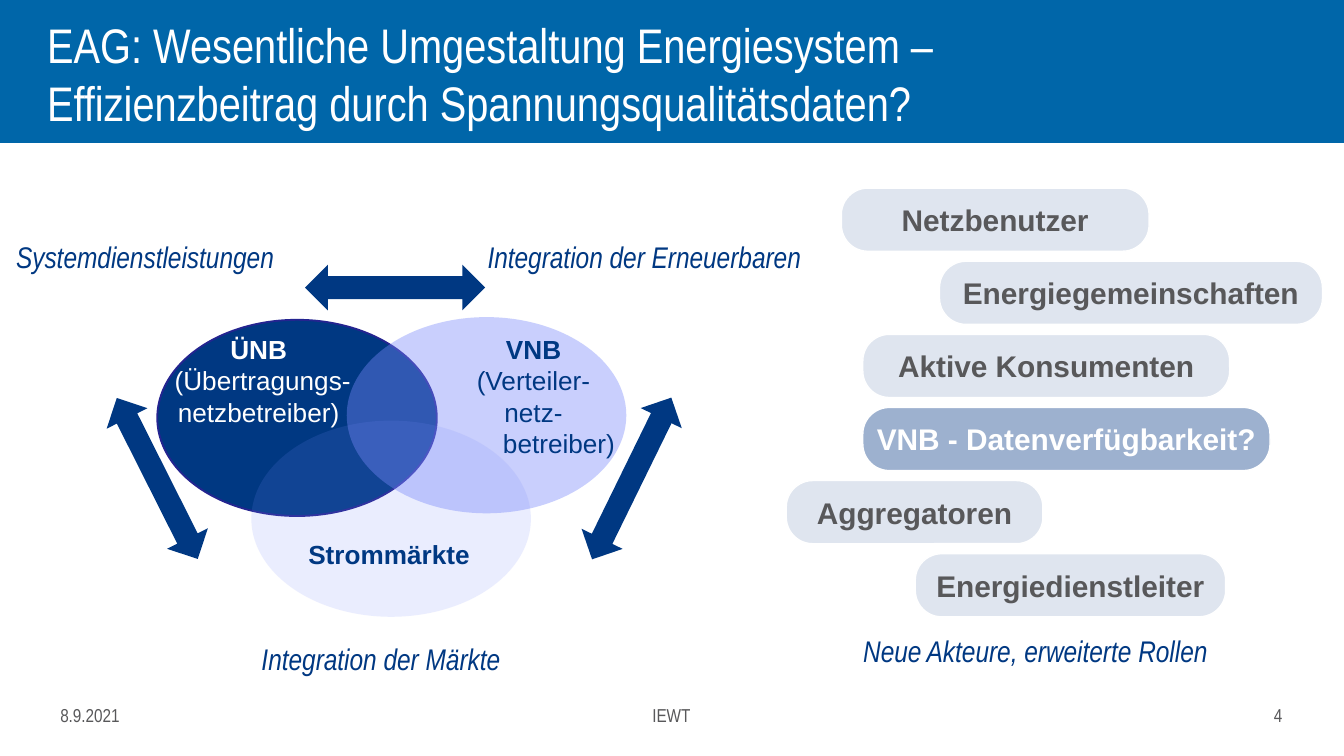
from pptx import Presentation
from pptx.dml.color import RGBColor
from pptx.enum.shapes import MSO_SHAPE as Shape
from pptx.enum.text import MSO_ANCHOR as Anchor, PP_ALIGN as Align
from pptx.oxml.ns import qn
from pptx.util import Inches, Pt
from lxml import etree

NAVY, BLUE, LILAC, GREY, WHITE = "003882", "0066A9", "7889FB", "58585A", "FFFFFF"


def add_filled(shapes, kind, box, fill, line=None, line_width=1):
    filled = shapes.add_shape(kind, *map(Inches, box))
    filled.shadow.inherit = False
    filled.fill.solid()
    filled.fill.fore_color.rgb = RGBColor.from_string(fill)
    if line:
        filled.line.color.rgb = RGBColor.from_string(line)
        filled.line.width = Pt(line_width)
    else:
        filled.line.fill.background()
    return filled


def write(frame, lines, size, color, name="Arial", align=Align.CENTER):
    frame.text = "\n".join(lines)
    for paragraph in frame.paragraphs:
        paragraph.alignment = align
        paragraph.font.size = Pt(size)
        paragraph.font.name = name
        paragraph.font.color.rgb = RGBColor.from_string(color)


prs = Presentation()
prs.slide_width = Inches(10)
prs.slide_height = prs.slide_width * 9 // 16
slide = prs.slides.add_slide(prs.slide_layouts[5])

header = add_filled(slide.shapes, Shape.RECTANGLE, (0, 0, 10, 1.06), BLUE, BLUE)
slide.shapes._spTree.insert(2, header._element)

title = slide.shapes.title
title.left, title.top, title.width, title.height = map(Inches, (0.35, 0.37, 7.32, 0.39))
heading = title.text_frame
heading.margin_left = heading.margin_right = heading.margin_top = 0
heading.margin_bottom = Inches(0.04)
heading.vertical_anchor = Anchor.MIDDLE
write(heading, ["EAG: Wesentliche Umgestaltung Energiesystem –\v"
                "Effizienzbeitrag durch Spannungsqualitätsdaten?"],
      26, WHITE, "Arial Narrow", Align.LEFT)

venn = slide.shapes.add_group_shape().shapes
for left, top, fill, line, alpha in [
    (1.17, 2.38, NAVY, "242490", 100),
    (2.58, 2.36, LILAC, None, 40),
    (1.87, 3.13, LILAC, None, 15),
]:
    circle = add_filled(venn, Shape.OVAL, (left, top, 2.08, 1.46), fill, line)
    if alpha < 100:
        tint = circle._element.spPr.find(qn("a:solidFill"))[0]
        etree.SubElement(tint, qn("a:alpha")).set("val", str(alpha * 1000))

for box, color, lines, indented, indent in [
    ((1.14, 2.43, 1.57, 0.81), WHITE, ["ÜNB", "(Übertragungs-", "netzbetreiber)"], 1, 0.06),
    ((2.19, 3.96, 1.41, 0.34), NAVY, ["Strommärkte"], 0, 0),
    ((3.26, 2.43, 1.42, 1.04), NAVY, ["VNB", "(Verteiler-", "netz-", "betreiber)"], 3, 0.38),
]:
    sector = venn.add_textbox(*map(Inches, box)).text_frame
    sector.word_wrap = True
    sector.margin_left = sector.margin_right = 0
    write(sector, lines, 14, color)
    sector.paragraphs[0].font.bold = True
    sector.paragraphs[indented]._p.get_or_add_pPr().set("marL", str(Inches(indent)))

for left, top, angle in [(4.03, 3.39, 296.1), (2.27, 1.97, 0), (0.5, 3.39, 243.3)]:
    arrow = add_filled(slide.shapes, Shape.LEFT_RIGHT_ARROW, (left, top, 1.34, 0.34), NAVY)
    arrow.rotation = angle

for left, top, width, caption in [
    (1.68, 4.72, 2.31, "Integration der Märkte"),
    (3.51, 1.73, 2.57, "Integration der Erneuerbaren"),
    (-0.3, 1.73, 2.76, "Systemdienstleistungen"),
    (6.27, 4.66, 2.87, "Neue Akteure, erweiterte Rollen"),
]:
    goal = slide.shapes.add_textbox(*map(Inches, (left, top, width, 0.37))).text_frame
    goal.word_wrap = True
    write(goal, [caption], 16, NAVY, "Arial Narrow")
    goal.paragraphs[0].font.italic = True

actors = [
    (6.26, 2.29, "Netzbenutzer"),
    (6.99, 2.85, "Energiegemeinschaften"),
    (6.42, 2.73, "Aktive Konsumenten"),
    (6.42, 3.03, "VNB - Datenverfügbarkeit?"),
    (5.85, 1.91, "Aggregatoren"),
    (6.81, 2.31, "Energiedienstleiter"),
]
for row, (left, width, actor) in enumerate(actors):
    fill, color = ("9DB1CF", WHITE) if actor.startswith("VNB") else ("DFE5EF", GREY)
    role = add_filled(slide.shapes, Shape.ROUNDED_RECTANGLE,
                      (left, 1.4 + row * 2.72 / 5, width, 0.47), fill, WHITE, 0.75)
    role.adjustments[0] = 0.42
    label = role.text_frame
    label.word_wrap = False
    label.margin_left = label.margin_right = 0
    label.margin_top = label.margin_bottom = Inches(0.04)
    label.vertical_anchor = Anchor.MIDDLE
    write(label, [actor], 16, color)
    label.paragraphs[0].font.bold = True

for left, width, note, align in [
    (8.46, 1.18, "4", Align.RIGHT),
    (0.35, 1.18, "8.9.2021", Align.LEFT),
    (2.24, 5.51, "IEWT", Align.CENTER),
]:
    footer = slide.shapes.add_textbox(*map(Inches, (left, 5.22, width, 0.2))).text_frame
    footer.word_wrap = True
    footer.vertical_anchor = Anchor.MIDDLE
    write(footer, [note], 10, GREY, "Arial Narrow", align)

prs.save("out.pptx")
